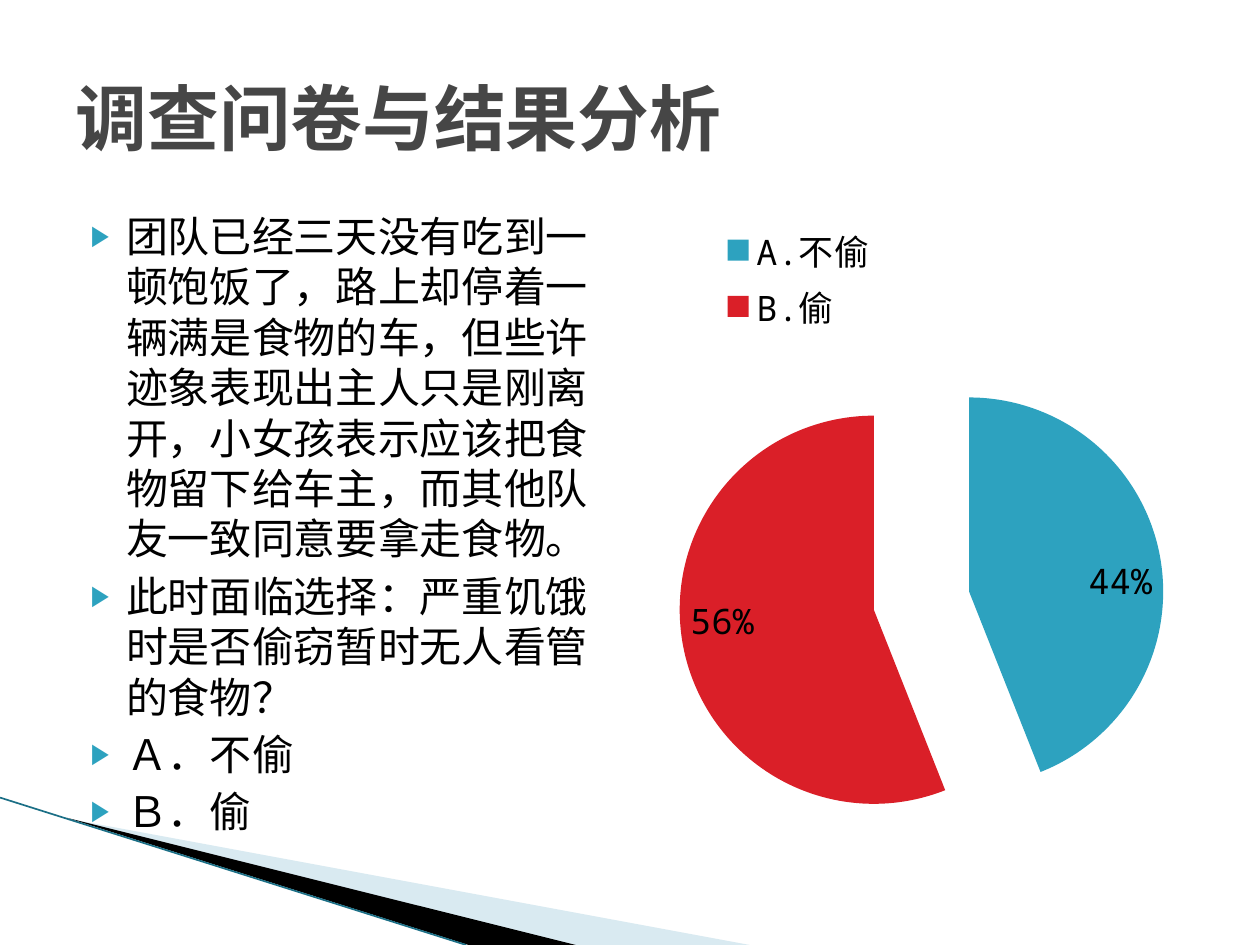
import pptx
import pptx.chart.data
import pptx.dml.color
import pptx.enum.chart
import pptx.enum.shapes
import pptx.enum.text
import pptx.oxml
import pptx.oxml.ns
import pptx.util
from lxml import etree

Inches = pptx.util.Inches
Pt = pptx.util.Pt
qn = pptx.oxml.ns.qn


def color(value):
    return pptx.dml.color.RGBColor.from_string(value)


def add_text(para, text, *, font, size, fill, bold=False):
    span = para.add_run()
    span.text = text
    span.font.name = font
    span.font.size = Pt(size)
    span.font.bold = bold
    span.font.color.rgb = color(fill)


class SlideBuilder:
    font = "Noto Sans Mono"
    ink = "000000"
    heading = "464646"
    teal = "2DA2BF"
    red = "DA1F28"

    def __init__(self, deck):
        self.page = deck.slides.add_slide(deck.slide_layouts[1])

    def wedge(self, points, fill, opacity=None):
        corners = [(Inches(x), Inches(y)) for x, y in points]
        builder = self.page.shapes.build_freeform(*corners[0], scale=1.0)
        builder.add_line_segments(corners[1:], close=True)
        shape = builder.convert_to_shape()
        shape.shadow.inherit = False
        shape.line.fill.background()
        shape.fill.solid()
        shape.fill.fore_color.rgb = color(fill)
        if opacity is not None:
            tint = shape.fill._xPr.find(".//" + qn("a:srgbClr"))
            etree.SubElement(tint, qn("a:alpha"), val=str(opacity * 1000))

    def line(self, start, end, fill, width):
        ends = [Inches(value) for value in (*start, *end)]
        connector = self.page.shapes.add_connector(
            pptx.enum.shapes.MSO_CONNECTOR.STRAIGHT, *ends)
        connector.line.color.rgb = color(fill)
        connector.line.width = Pt(width)
        etree.SubElement(connector._element.spPr, qn("a:effectLst"))

    def place(self, box, left, top, width, height):
        box.left, box.top = Inches(left), Inches(top)
        box.width, box.height = Inches(width), Inches(height)
        box.text_frame.word_wrap = True
        box.text_frame.auto_size = pptx.enum.text.MSO_AUTO_SIZE.NONE
        box._element.getparent().append(box._element)
        return box.text_frame

    def title(self, text, *bounds):
        frame = self.place(self.page.shapes.title, *bounds)
        frame.vertical_anchor = pptx.enum.text.MSO_ANCHOR.MIDDLE
        para = frame.paragraphs[0]
        para.alignment = pptx.enum.text.PP_ALIGN.LEFT
        add_text(para, text, font=self.font, size=41, fill=self.heading, bold=True)

    def bullets(self, items, *bounds):
        frame = self.place(self.page.placeholders[1], *bounds)
        for index, item in enumerate(items):
            para = frame.add_paragraph() if index else frame.paragraphs[0]
            para.space_before = Pt(4 if index else 0)
            self.mark(para)
            add_text(para, item, font=self.font, size=24, fill=self.ink)

    def mark(self, para):
        settings = para._p.get_or_add_pPr()
        settings.set("marL", str(Inches(0.4)))
        settings.set("indent", str(Inches(-0.28)))
        tint = etree.SubElement(settings, qn("a:buClr"))
        etree.SubElement(tint, qn("a:srgbClr"), val=self.teal)
        etree.SubElement(settings, qn("a:buSzPct"), val="68000")
        etree.SubElement(settings, qn("a:buChar"), char="▶")

    def layout(self, parent, x, y, w, h, inner=False):
        for old in parent.findall(qn("c:layout")):
            parent.remove(old)
        layout = etree.Element(qn("c:layout"))
        manual = etree.SubElement(layout, qn("c:manualLayout"))
        settings = {"xMode": "edge", "yMode": "edge", "x": x, "y": y, "w": w, "h": h}
        if inner:
            settings = {"layoutTarget": "inner", **settings}
        for name, value in settings.items():
            etree.SubElement(manual, qn("c:" + name), val=str(value))
        position = parent.find(qn("c:legendPos"))
        if position is None:
            parent.insert(0, layout)
        else:
            position.addnext(layout)

    def style_font(self, font, size):
        font.name = self.font
        font.size = Pt(size)
        font.color.rgb = color(self.ink)

    def pie(self, shares, *bounds):
        data = pptx.chart.data.CategoryChartData()
        data.categories = list(shares)
        data.add_series("Series 1", list(shares.values()))
        chart = self.page.shapes.add_chart(
            pptx.enum.chart.XL_CHART_TYPE.PIE,
            *[Inches(value) for value in bounds], data).chart
        chart.has_title = False
        self.style_font(chart.font, 18)
        chart.has_legend = True
        chart.legend.position = pptx.enum.chart.XL_LEGEND_POSITION.LEFT
        chart.legend.include_in_layout = False
        self.style_font(chart.legend.font, 20)
        plot = chart.plots[0]
        plot.vary_by_categories = True
        series = plot.series[0]
        for index, fill in enumerate((self.teal, self.red)):
            point = series.points[index].format
            point.fill.solid()
            point.fill.fore_color.rgb = color(fill)
            point.line.fill.background()
        explosion = etree.Element(qn("c:explosion"), val="25")
        series._element.find(qn("c:dPt")).addprevious(explosion)
        labels = series.data_labels
        labels.show_percentage = True
        labels.show_value = False
        labels.number_format = "0%"
        labels.number_format_is_linked = False
        labels.position = pptx.enum.chart.XL_LABEL_POSITION.INSIDE_END
        self.style_font(labels.font, 20)
        area = chart._chartSpace.chart.plotArea
        self.layout(area, 0.09, 0.23, 0.83, 0.75, inner=True)
        self.layout(chart.legend._element, 0.12, 0.02, 0.35, 0.18)


def main():
    deck = pptx.Presentation()
    deck.slide_width, deck.slide_height = Inches(10), Inches(7.5)
    slide = SlideBuilder(deck)
    slide.wedge([(0.55, 6.5), (5.95, 7.5), (4.56, 7.5)], "A0CBDC", opacity=40)
    slide.wedge([(0.53, 6.49), (4.57, 7.5), (3.72, 7.5)], slide.ink)
    slide.line((0, 6.33), (3.7, 7.5), "1B6F86", 0.95)
    slide.title("调查问卷与结果分析", 0.5, 0.3, 9, 1.25)
    slide.bullets([
        "团队已经三天没有吃到一顿饱饭了，路上却停着一辆满是食物的车，但些许迹象表现出主人只是刚离开，"
        "小女孩表示应该把食物留下给车主，而其他队友一致同意要拿走食物。",
        "此时面临选择：严重饥饿时是否偷窃暂时无人看管的食物？",
        "Ａ．不偷",
        "Ｂ．偷",
    ], 0.5, 1.62, 4.42, 4.95)
    slide.pie({"A.不偷": 44, "B.偷": 56}, 4.97, 1.64, 4.64, 5.17)
    deck.save("out.pptx")


if __name__ == "__main__":
    main()
